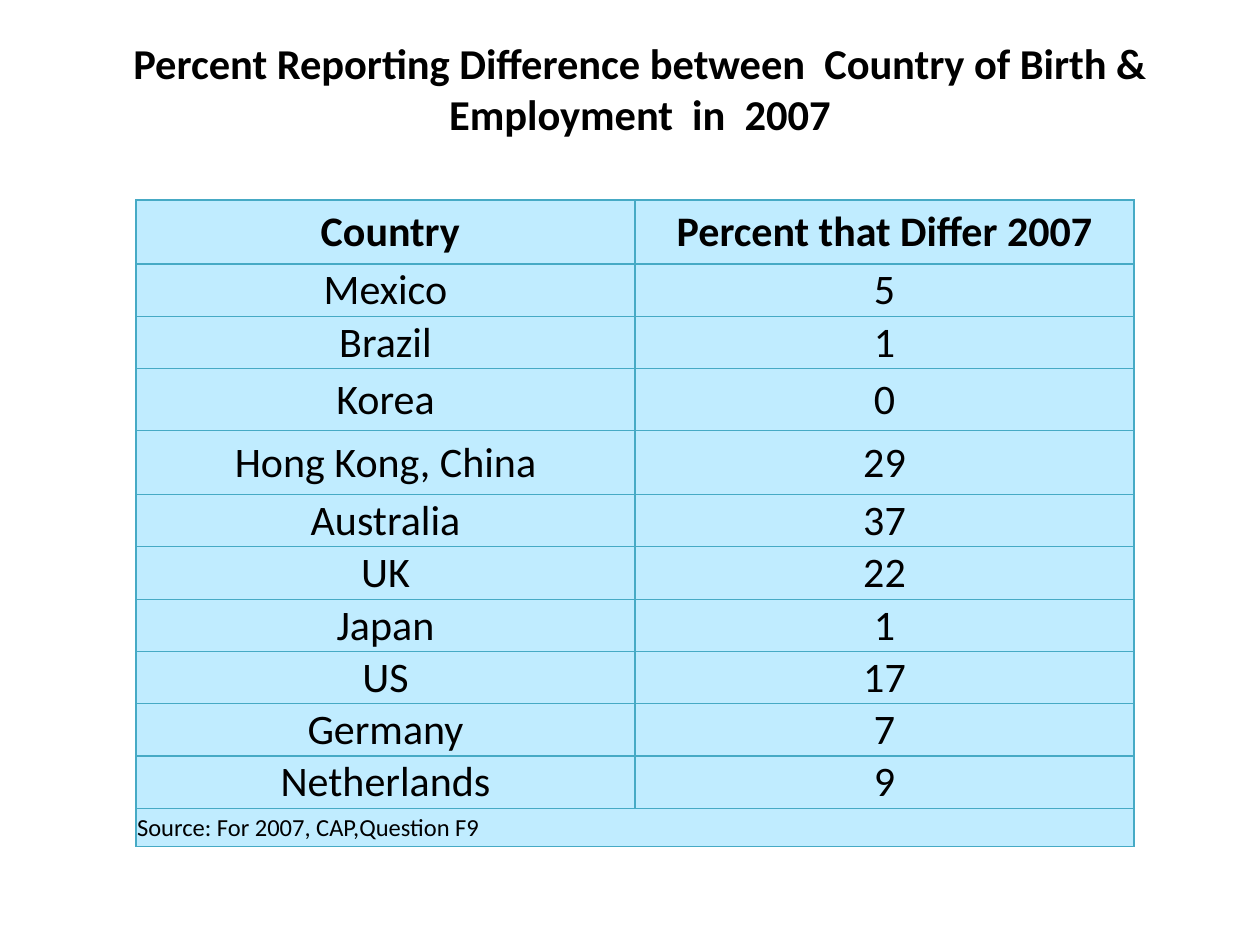
from pptx import Presentation
from pptx.dml.color import RGBColor
from pptx.enum.text import MSO_ANCHOR as Anchor, MSO_AUTO_SIZE as AutoSize, PP_ALIGN as Align
from pptx.oxml import parse_xml
from pptx.oxml.ns import nsdecls
from pptx.util import Pt

PX = 7257
BLACK = RGBColor(0x00, 0x00, 0x00)
PALE_BLUE = RGBColor(0xC0, 0xEC, 0xFF)
TEAL = RGBColor(0x46, 0xAA, 0xC5)

HEADING = "Percent Reporting Difference between  Country of Birth & Employment  in  2007"
HEADER = (" Country", "Percent that Differ 2007")
PERCENTS = [
    ("Mexico", 5), ("Brazil", 1), ("Korea", 0), ("Hong Kong, China", 29),
    ("Australia", 37), ("UK", 22), ("Japan", 1), ("US", 17),
    ("Germany", 7), ("Netherlands", 9),
]
SOURCE_NOTE = "Source: For 2007, CAP,Question F9"
ROW_HEIGHT = 47
TALL_ROWS = {0: 64, 3: 62, 4: 64, 11: 38}


class SlideBuilder:
    font_name = "Calibri"

    def __init__(self, slide):
        self.slide = slide

    def set_text(self, frame, text, size, bold=False, align=Align.CENTER):
        frame.text = text
        paragraph = frame.paragraphs[0]
        paragraph.alignment = align
        font = paragraph.font
        font.name, font.size, font.bold = self.font_name, Pt(size), bold
        font.color.rgb = BLACK

    def title(self, text, left, top, width, height):
        heading = self.slide.shapes.title
        heading.left, heading.top = left * PX, top * PX
        heading.width, heading.height = width * PX, height * PX
        frame = heading.text_frame
        frame.auto_size = AutoSize.NONE
        frame.word_wrap = True
        frame.vertical_anchor = Anchor.BOTTOM
        frame.margin_bottom = 19 * PX
        self.set_text(frame, text, 24.3, bold=True)

    def border(self, cell):
        properties = cell._tc.get_or_add_tcPr()
        for position, side in enumerate(("lnL", "lnR", "lnT", "lnB")):
            properties.insert(position, parse_xml(
                f'<a:{side} {nsdecls("a")} w="{Pt(0.75)}"><a:solidFill>'
                f'<a:srgbClr val="{TEAL}"/></a:solidFill></a:{side}>'))

    def cell(self, cell, text, size=24, bold=False, align=Align.CENTER):
        cell.fill.solid()
        cell.fill.fore_color.rgb = PALE_BLUE
        cell.vertical_anchor = Anchor.MIDDLE
        cell.margin_left = cell.margin_right = cell.margin_top = PX
        cell.margin_bottom = 0
        self.border(cell)
        self.set_text(cell.text_frame, text, size, bold, align)

    def table(self, header, records, note, left, top, width, height):
        rows = [header, *records]
        table = self.slide.shapes.add_table(
            len(rows) + 1, len(header), left * PX, top * PX, width * PX, height * PX).table
        for index, row in enumerate(table.rows):
            row.height = TALL_ROWS.get(index, ROW_HEIGHT) * PX
        for index, values in enumerate(rows):
            for column, value in enumerate(values):
                self.cell(table.cell(index, column), str(value), bold=index == 0)
        note_cell, note_end = table.cell(len(rows), 0), table.cell(len(rows), 1)
        note_cell.merge(note_end)
        self.border(note_end)
        self.cell(note_cell, note, size=14, align=Align.LEFT)


def main():
    deck = Presentation()
    deck.slide_width, deck.slide_height = 1260 * PX, 945 * PX
    builder = SlideBuilder(deck.slides.add_slide(deck.slide_layouts[5]))
    builder.title(HEADING, 73, 42, 1134, 116)
    builder.table(HEADER, PERCENTS, SOURCE_NOTE, 136, 200, 998, 640)
    deck.save("out.pptx")


if __name__ == "__main__":
    main()
